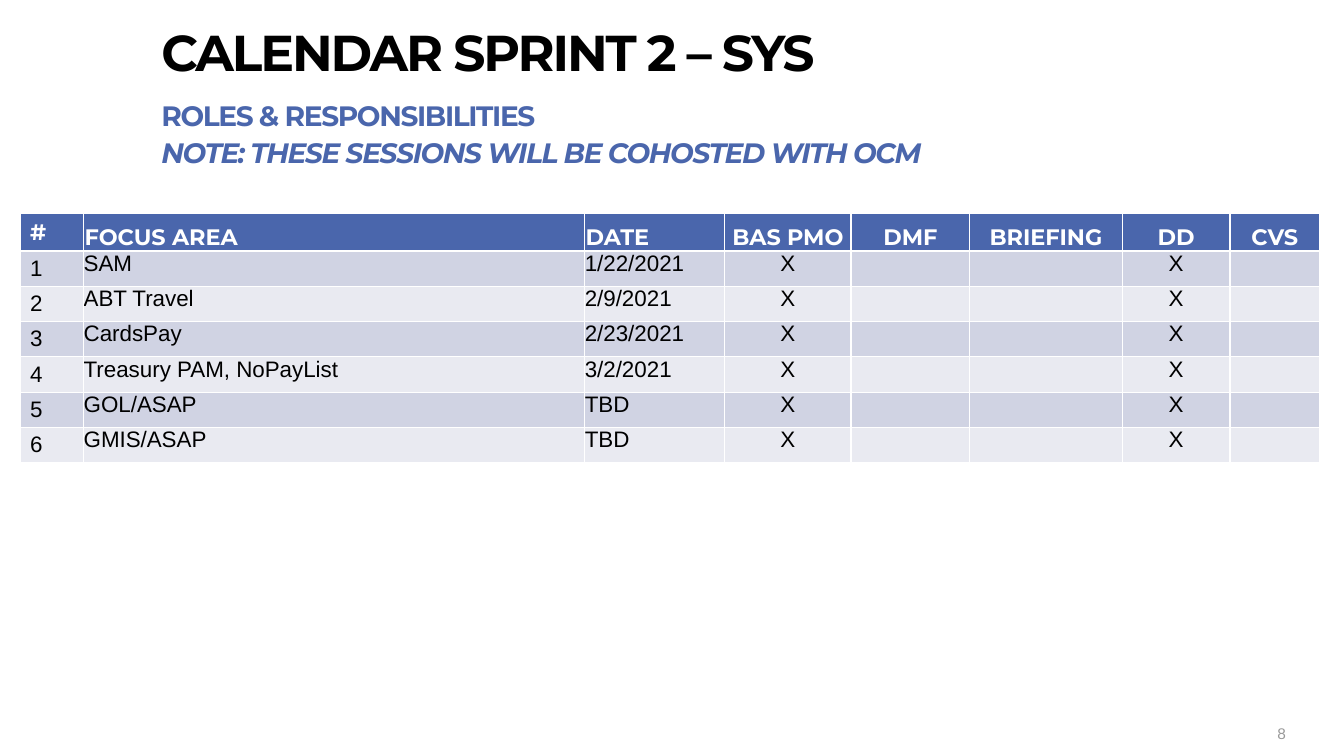
from dataclasses import dataclass

from lxml.etree import SubElement
from pptx import Presentation
from pptx.dml.color import RGBColor
from pptx.enum.text import MSO_ANCHOR, MSO_AUTO_SIZE, PP_ALIGN
from pptx.oxml.ns import qn
from pptx.util import Inches, Pt


@dataclass(frozen=True)
class Theme:
    blue: str = "4A66AC"
    black: str = "000000"
    white: str = "FFFFFF"
    gray: str = "999999"
    bands: tuple = ("D0D3E3", "E9EAF1")
    heading_font: str = "Montserrat"
    body_font: str = "Arial"
    title_size: int = 36
    subtitle_size: int = 20
    table_size: int = 16
    number_size: int = 11


THEME = Theme()
HEADERS = ("#", "FOCUS AREA", "DATE", "BAS PMO", "DMF", "BRIEFING", "DD", "CVS")
COLUMN_WIDTHS = (0.63, 4.97, 1.39, 1.25, 1.18, 1.51, 1.07, 0.89)
SESSIONS = (
    ("SAM", "1/22/2021"),
    ("ABT Travel", "2/9/2021"),
    ("CardsPay", "2/23/2021"),
    ("Treasury PAM, NoPayList", "3/2/2021"),
    ("GOL/ASAP", "TBD"),
    ("GMIS/ASAP", "TBD"),
)
HEADER_HEIGHT = 0.36
ROW_HEIGHT = 0.35


def write(para, text, *, size, color, font=THEME.body_font, bold=False,
          italic=False, tracking=0, line_spacing=None, align=PP_ALIGN.LEFT):
    para.alignment = align
    if line_spacing:
        para.line_spacing = line_spacing
    span = para.add_run()
    span.text = text
    span.font.name = font
    span.font.size = Pt(size)
    span.font.bold = bold
    span.font.italic = italic
    span.font.color.rgb = RGBColor.from_string(color)
    if tracking:
        span.font._element.set("spc", str(int(tracking * 100)))


def set_margins(target, left, top, right, bottom):
    target.margin_left, target.margin_top = Inches(left), Inches(top)
    target.margin_right, target.margin_bottom = Inches(right), Inches(bottom)


def prepare_frame(box, margins):
    frame = box.text_frame
    frame.word_wrap = True
    frame.auto_size = MSO_AUTO_SIZE.NONE
    frame.vertical_anchor = MSO_ANCHOR.TOP
    set_margins(frame, *margins)
    return frame


def add_title(page, left, top, width, height):
    box = page.shapes.title
    box.left, box.top = Inches(left), Inches(top)
    box.width, box.height = Inches(width), Inches(height)
    frame = prepare_frame(box, (0, 0.07, 0, 0))
    write(frame.paragraphs[0], "CALENDAR SPRINT 2 – SYS", size=THEME.title_size,
          color=THEME.black, font=THEME.heading_font, bold=True, tracking=-1.5,
          line_spacing=0.8)


def add_subtitle(page, left, top, width, height):
    box = page.shapes.add_textbox(Inches(left), Inches(top), Inches(width), Inches(height))
    frame = prepare_frame(box, (0, 0, 0, 0))
    lines = (("ROLES & RESPONSIBILITIES", False),
             ("NOTE: THESE SESSIONS WILL BE COHOSTED WITH OCM", True))
    for index, (text, italic) in enumerate(lines):
        para = frame.add_paragraph() if index else frame.paragraphs[0]
        write(para, text, size=THEME.subtitle_size, color=THEME.blue,
              font=THEME.heading_font, bold=True, italic=italic, tracking=-1,
              line_spacing=1.1)


def style_cell(cell, fill):
    properties = cell._tc.get_or_add_tcPr()
    for side in ("lnL", "lnR", "lnT", "lnB"):
        line = SubElement(properties, qn(f"a:{side}"), w=str(Pt(1)))
        paint = SubElement(line, qn("a:solidFill"))
        SubElement(paint, qn("a:srgbClr"), val=THEME.white)
    cell.fill.solid()
    cell.fill.fore_color.rgb = RGBColor.from_string(fill)


def fill_cell(cell, text, row, column):
    is_header = row == 0
    style_cell(cell, THEME.blue if is_header else THEME.bands[(row - 1) % 2])
    if column == 0:
        set_margins(cell, 0.1, 0.05, 0.1, 0.05)
        cell.vertical_anchor = MSO_ANCHOR.TOP if is_header else MSO_ANCHOR.MIDDLE
    elif is_header:
        set_margins(cell, 0.01, 0.01, 0.01, 0)
        cell.vertical_anchor = MSO_ANCHOR.BOTTOM
    else:
        set_margins(cell, 0, 0, 0, 0)
        cell.vertical_anchor = MSO_ANCHOR.TOP
    if text:
        write(cell.text_frame.paragraphs[0], text, size=THEME.table_size,
              color=THEME.white if is_header else THEME.black,
              font=THEME.heading_font if is_header else THEME.body_font,
              bold=is_header,
              align=PP_ALIGN.CENTER if column > 2 else PP_ALIGN.LEFT)


def add_schedule(page, left, top):
    attendance = ("X", "", "", "X", "")
    rows = [HEADERS] + [(str(number), *session, *attendance)
                        for number, session in enumerate(SESSIONS, 1)]
    height = HEADER_HEIGHT + ROW_HEIGHT * len(SESSIONS)
    table = page.shapes.add_table(len(rows), len(HEADERS), Inches(left), Inches(top),
                                  Inches(sum(COLUMN_WIDTHS)), Inches(height)).table
    for column, width in zip(table.columns, COLUMN_WIDTHS):
        column.width = Inches(width)
    for row, texts in enumerate(rows):
        table.rows[row].height = Inches(ROW_HEIGHT if row else HEADER_HEIGHT)
        for column, text in enumerate(texts):
            fill_cell(table.cell(row, column), text, row, column)


def add_page_number(page, left, top, width, height):
    box = page.shapes.add_textbox(Inches(left), Inches(top), Inches(width), Inches(height))
    frame = prepare_frame(box, (0.1, 0.05, 0.1, 0.05))
    write(frame.paragraphs[0], "8", size=THEME.number_size, color=THEME.gray)


def main():
    deck = Presentation()
    deck.slide_width, deck.slide_height = Inches(13.33), Inches(7.5)
    page = deck.slides.add_slide(deck.slide_layouts[5])
    add_title(page, 1.6, 0.26, 10.24, 0.56)
    add_subtitle(page, 1.6, 0.94, 10.14, 0.56)
    add_schedule(page, 0.2, 2.12)
    add_page_number(page, 12.57, 7.13, 0.42, 0.23)
    deck.save("out.pptx")


if __name__ == "__main__":
    main()
